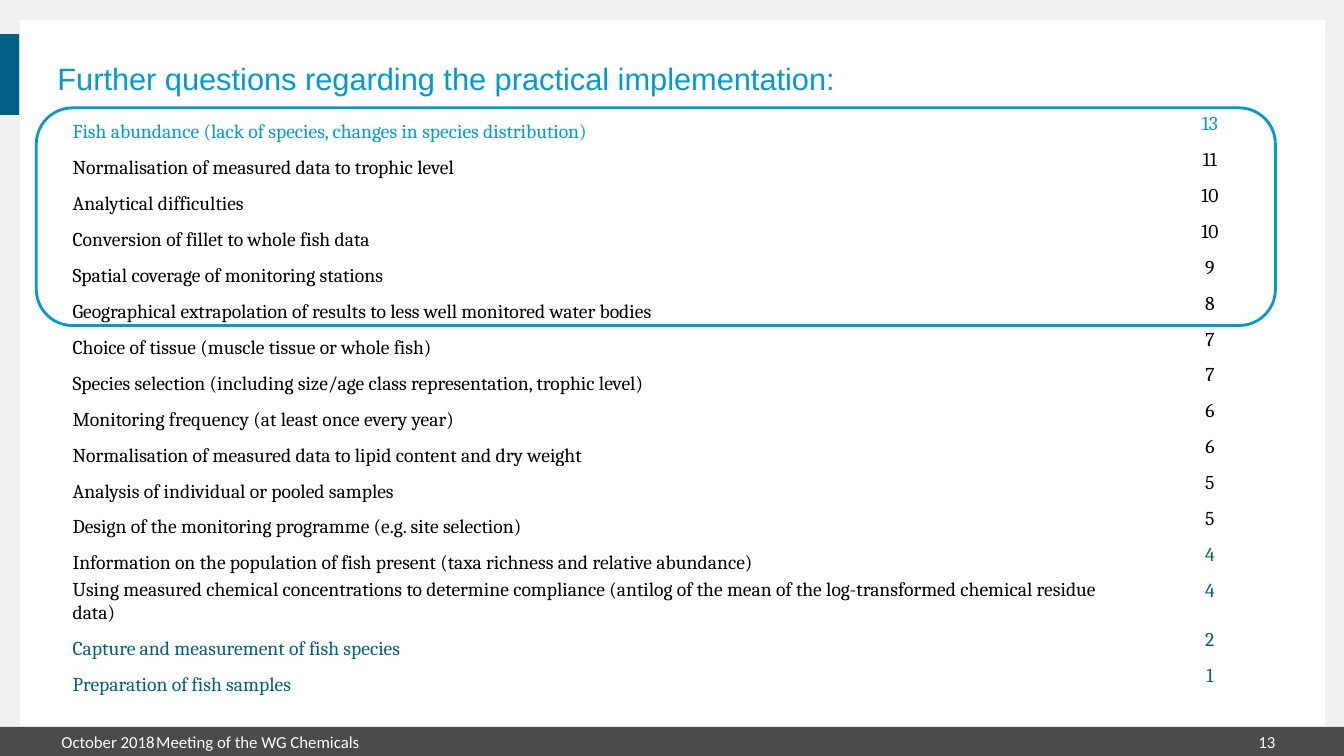
from pptx import Presentation
from pptx.dml.color import RGBColor
from pptx.enum.shapes import MSO_SHAPE
from pptx.enum.text import MSO_ANCHOR, PP_ALIGN
from pptx.util import Inches, Pt

COLORS = {
    "frame": "F0F1F1",
    "white": "FFFFFF",
    "footer": "4B4B4D",
    "petrol": "005F85",
    "cyan": "009BD5",
    "green": "007626",
    "black": "000000",
}

QUESTIONS = [
    ("Fish abundance (lack of species, changes in species distribution)", 13, "cyan", "cyan"),
    ("Normalisation of measured data to trophic level", 11, "black", "black"),
    ("Analytical difficulties", 10, "black", "black"),
    ("Conversion of fillet to whole fish data", 10, "black", "black"),
    ("Spatial coverage of monitoring stations", 9, "black", "black"),
    ("Geographical extrapolation of results to less well monitored water bodies", 8, "black", "black"),
    ("Choice of tissue (muscle tissue or whole fish)", 7, "black", "black"),
    ("Species selection (including size/age class representation, trophic level)", 7, "black", "black"),
    ("Monitoring frequency (at least once every year)", 6, "black", "black"),
    ("Normalisation of measured data to lipid content and dry weight", 6, "black", "black"),
    ("Analysis of individual or pooled samples", 5, "black", "black"),
    ("Design of the monitoring programme (e.g. site selection)", 5, "black", "black"),
    ("Information on the population of fish present (taxa richness and relative abundance)",
     4, "black", "green"),
    ("Using measured chemical concentrations to determine compliance "
     "(antilog of the mean of the log-transformed chemical residue data)", 4, "black", "petrol"),
    ("Capture and measurement of fish species", 2, "petrol", "petrol"),
    ("Preparation of fish samples", 1, "petrol", "petrol"),
]

TABLE_HEIGHT = 5.84
TALL_ROW = 13
TALL_HEIGHT = 0.49
ROW_HEIGHT = (TABLE_HEIGHT - TALL_HEIGHT) / (len(QUESTIONS) - 1)

QUESTION_CELL = {
    "margin_left": Inches(0.01),
    "margin_top": Inches(0.01),
    "margin_right": Inches(0.01),
    "margin_bottom": 0,
    "vertical_anchor": MSO_ANCHOR.BOTTOM,
}
VOTES_CELL = {
    "margin_left": Inches(0.13),
    "margin_top": Inches(0.05),
    "margin_right": Inches(0.13),
    "margin_bottom": Inches(0.05),
    "vertical_anchor": MSO_ANCHOR.TOP,
}
TEXT_FRAME = {
    "margin_left": 0,
    "margin_top": 0,
    "margin_right": 0,
    "margin_bottom": 0,
    "word_wrap": True,
}


def rgb(color):
    return RGBColor.from_string(COLORS[color])


def apply_format(target, values):
    for name, value in values.items():
        setattr(target, name, value)


def write(paragraph, text, font, size, color, **paragraph_format):
    apply_format(paragraph, paragraph_format)
    run = paragraph.add_run()
    run.text = text
    apply_format(run.font, {"name": font, "size": Pt(size)})
    run.font.color.rgb = rgb(color)


def add_panel(slide, box, color):
    panel = slide.shapes.add_shape(MSO_SHAPE.RECTANGLE, *map(Inches, box))
    panel.shadow.inherit = False
    panel.fill.solid()
    panel.fill.fore_color.rgb = rgb(color)
    panel.line.fill.background()


def add_label(slide, box, text, font, size, color, anchor, **paragraph_format):
    frame = slide.shapes.add_textbox(*map(Inches, box)).text_frame
    apply_format(frame, TEXT_FRAME | {"vertical_anchor": anchor})
    write(frame.paragraphs[0], text, font, size, color, **paragraph_format)


def add_footer_label(slide, left, width, text, alignment=PP_ALIGN.LEFT):
    add_label(slide, (left, 7.21, width, 0.29), text, "Calibri", 12, "white",
              MSO_ANCHOR.MIDDLE, alignment=alignment)


def fill_cell(cell, text, color, cell_format, alignment):
    cell.fill.background()
    apply_format(cell, cell_format)
    write(cell.text_frame.paragraphs[0], text, "Cambria", 14, color, alignment=alignment)


def add_question_table(slide):
    box = map(Inches, (0.71, 1.07, 11.94, TABLE_HEIGHT))
    table = slide.shapes.add_table(len(QUESTIONS), 2, *box).table
    apply_format(table, {"first_row": False, "horz_banding": False})
    for column, width in zip(table.columns, (10.64, 1.3)):
        column.width = Inches(width)
    for index, (question, votes, question_color, votes_color) in enumerate(QUESTIONS):
        row = table.rows[index]
        row.height = Inches(TALL_HEIGHT if index == TALL_ROW else ROW_HEIGHT)
        question_cell, votes_cell = row.cells
        fill_cell(question_cell, question, question_color, QUESTION_CELL, PP_ALIGN.LEFT)
        fill_cell(votes_cell, str(votes), votes_color, VOTES_CELL, PP_ALIGN.CENTER)


def add_top_answers_outline(slide):
    outline = slide.shapes.add_shape(
        MSO_SHAPE.ROUNDED_RECTANGLE, *map(Inches, (0.36, 1.07, 12.29, 2.16)))
    outline.shadow.inherit = False
    outline.fill.background()
    outline.line.color.rgb = rgb("cyan")
    outline.line.width = Pt(2)


def main():
    presentation = Presentation()
    apply_format(presentation, {"slide_width": Inches(13.33), "slide_height": Inches(7.5)})
    slide = presentation.slides.add_slide(presentation.slide_layouts[6])

    add_panel(slide, (0, 0, 13.33, 7.5), "frame")
    add_panel(slide, (0.2, 0.2, 12.94, 7.18), "white")
    add_panel(slide, (0, 7.21, 13.33, 0.29), "footer")
    add_panel(slide, (0, 0.34, 0.19, 0.8), "petrol")

    add_label(slide, (0.57, 0.3, 12, 0.66),
              "Further questions regarding the practical implementation:",
              "Arial", 22, "cyan", MSO_ANCHOR.BOTTOM, line_spacing=Pt(22))
    add_footer_label(slide, 0.61, 0.94, "October 2018")
    add_footer_label(slide, 1.55, 9.8, "Meeting of the WG Chemicals")
    add_footer_label(slide, 11.84, 0.81, "13", PP_ALIGN.RIGHT)

    add_question_table(slide)
    add_top_answers_outline(slide)
    presentation.save("out.pptx")


if __name__ == "__main__":
    main()
